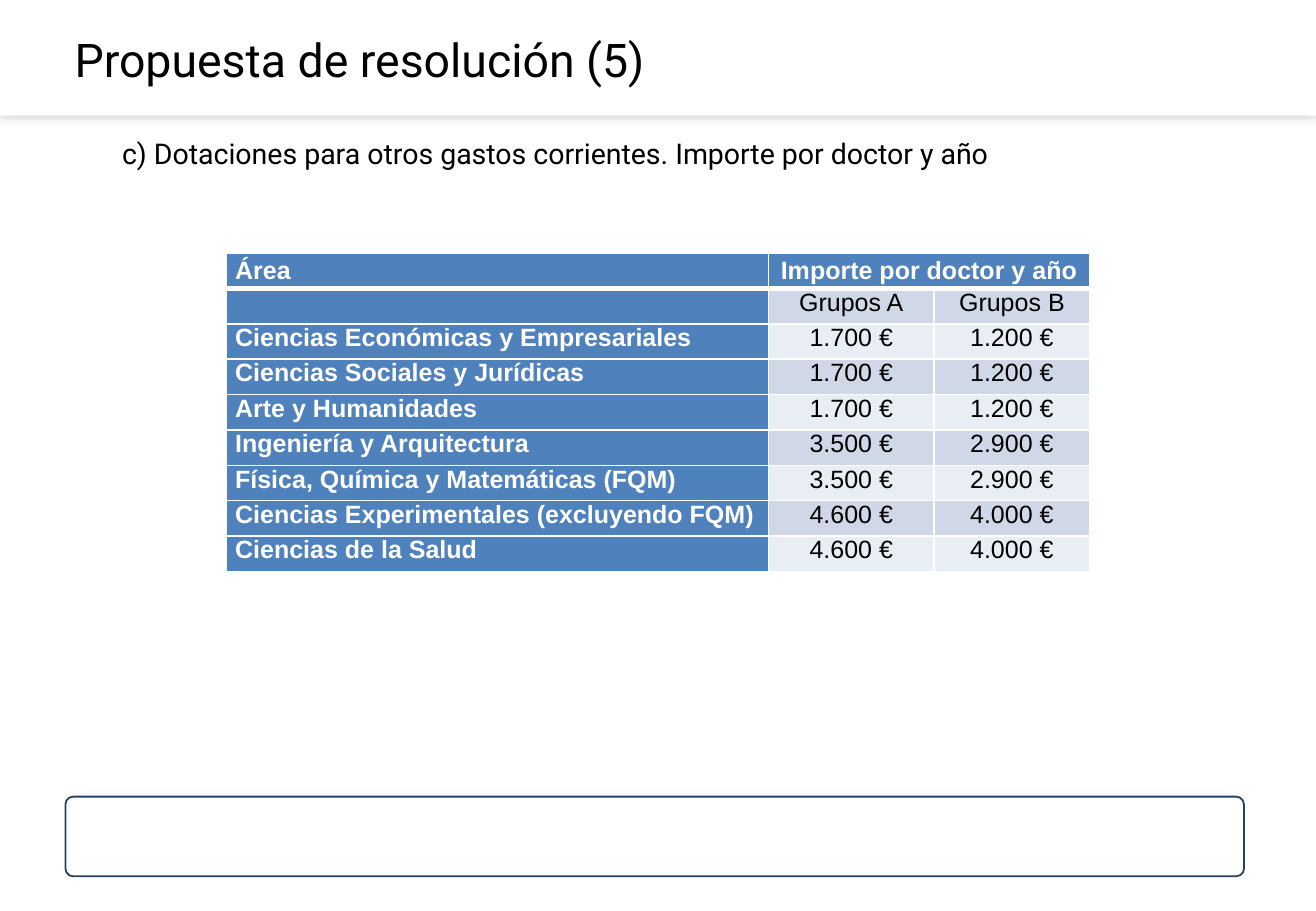
from dataclasses import dataclass

from lxml.etree import SubElement
from pptx import Presentation
from pptx.dml.color import RGBColor
from pptx.enum.shapes import MSO_SHAPE
from pptx.enum.text import MSO_ANCHOR, PP_ALIGN
from pptx.oxml import parse_xml
from pptx.oxml.ns import nsdecls, qn
from pptx.util import Inches, Pt


@dataclass(frozen=True)
class Theme:
    white: str = "FFFFFF"
    black: str = "000000"
    navy: str = "254061"
    blue: str = "4F81BD"
    bands: tuple = ("D0D8E8", "E9EDF4")
    heading_font: str = "Roboto"
    table_font: str = "Arial"
    title_size: int = 26
    body_size: int = 16
    table_size: int = 14


class SlideBuilder:
    """Adds styled elements to the current slide."""

    def __init__(self, prs, theme):
        self.theme = theme
        self.s = prs.slides.add_slide(prs.slide_layouts[5])

    def add_text(self, p, text, size, font, color, bold=False):
        r = p.add_run()
        r.text = text
        r.font.size = Pt(size)
        r.font.name = font
        r.font.bold = bold
        r.font.color.rgb = RGBColor.from_string(color)

    def frame(self, sp, anchor):
        tf = sp.text_frame
        tf.word_wrap = True
        tf.vertical_anchor = anchor
        tf.margin_left = tf.margin_right = Inches(0.07)
        tf.margin_top = tf.margin_bottom = Inches(0.03)
        return tf

    def panel(self, kind, box, line=None):
        sp = self.s.shapes.add_shape(kind, *map(Inches, box))
        sp.shadow.inherit = False
        sp.fill.solid()
        sp.fill.fore_color.rgb = RGBColor.from_string(self.theme.white)
        if line:
            sp.line.color.rgb = RGBColor.from_string(line)
            sp.line.width = Pt(1)
        else:
            sp.line.fill.background()
        return sp

    def header(self, box):
        sp = self.panel(MSO_SHAPE.RECTANGLE, box)
        effects = sp._element.spPr.find(qn("a:effectLst"))
        effects.append(parse_xml(
            f'<a:outerShdw {nsdecls("a")} blurRad="{Pt(6)}" dist="0" dir="13500000">'
            f'<a:srgbClr val="{self.theme.black}"><a:alpha val="20000"/></a:srgbClr>'
            '</a:outerShdw>'))

    def footer(self, box):
        sp = self.panel(MSO_SHAPE.ROUNDED_RECTANGLE, box, self.theme.navy)
        sp.adjustments[0] = 0.096

    def title(self, text, box):
        t = self.theme
        sp = self.s.shapes.title
        sp.left, sp.top, sp.width, sp.height = map(Inches, box)
        self.s.shapes._spTree.append(sp._element)
        p = self.frame(sp, MSO_ANCHOR.MIDDLE).paragraphs[0]
        p.alignment = PP_ALIGN.LEFT
        self.add_text(p, text, t.title_size, t.heading_font, t.black)

    def body(self, text, box):
        t = self.theme
        sp = self.s.shapes.add_textbox(*map(Inches, box))
        p = self.frame(sp, MSO_ANCHOR.TOP).paragraphs[0]
        p.level = 1
        pPr = p._p.get_or_add_pPr()
        pPr.set("marL", str(Inches(0.57)))
        pPr.set("indent", str(Inches(-0.22)))
        self.add_text(p, text, t.body_size, t.heading_font, t.black)

    def borders(self, cell, widths):
        tcPr = cell._tc.get_or_add_tcPr()
        for side, width in widths.items():
            ln = SubElement(tcPr, qn(f"a:ln{side}"), w=str(Pt(width)))
            fill = SubElement(ln, qn("a:solidFill"))
            SubElement(fill, qn("a:srgbClr"), val=self.theme.white)

    def cell(self, cell, text, row, col):
        t = self.theme
        heading = row == 0 or col == 0
        cell.margin_left = cell.margin_right = Inches(0.07)
        cell.margin_top = cell.margin_bottom = 0
        cell.vertical_anchor = MSO_ANCHOR.MIDDLE if row == 0 else MSO_ANCHOR.TOP
        self.borders(cell, {"L": 1, "R": 1, "T": 3 if row == 1 else 1,
                            "B": 3 if row == 0 else 1})
        cell.fill.solid()
        color = t.blue if heading else t.bands[(row - 1) % 2]
        cell.fill.fore_color.rgb = RGBColor.from_string(color)
        p = cell.text_frame.paragraphs[0]
        p.alignment = PP_ALIGN.CENTER if col else PP_ALIGN.JUSTIFY
        if text:
            self.add_text(p, text, t.table_size, t.table_font,
                          t.white if heading else t.black, heading)
        else:
            p._p.get_or_add_endParaRPr().set("sz", str(t.table_size * 100))

    def table(self, rows, box, widths):
        shape = self.s.shapes.add_table(len(rows), len(widths), *map(Inches, box))
        table = shape.table
        table.horz_banding = table.first_row = False
        for column, width in zip(table.columns, widths):
            column.width = Inches(width)
        for i, row in enumerate(rows):
            for j, text in enumerate(row):
                self.cell(table.cell(i, j), text, i, j)
        table.cell(0, 1).merge(table.cell(0, 2))


AMOUNTS = [
    ("Área", "Importe por doctor y año", ""),
    ("", "Grupos A", "Grupos B"),
    ("Ciencias Económicas y Empresariales", "1.700 €", "1.200 €"),
    ("Ciencias Sociales y Jurídicas", "1.700 €", "1.200 €"),
    ("Arte y Humanidades", "1.700 €", "1.200 €"),
    ("Ingeniería y Arquitectura", "3.500 €", "2.900 €"),
    ("Física, Química y Matemáticas (FQM)", "3.500 €", "2.900 €"),
    ("Ciencias Experimentales (excluyendo FQM)", "4.600 €", "4.000 €"),
    ("Ciencias de la Salud", "4.600 €", "4.000 €"),
]


def main():
    prs = Presentation()
    prs.slide_width, prs.slide_height = Inches(10.24), Inches(7.09)
    slide = SlideBuilder(prs, Theme())
    slide.header((0, 0, 10.24, 0.9))
    slide.footer((0.51, 6.2, 9.17, 0.62))
    slide.title("Propuesta de resolución (5)", (0.51, 0.09, 9.21, 0.73))
    slide.body("c) Dotaciones para otros gastos corrientes. Importe por doctor y año",
               (0.53, 1.03, 9.18, 5.02))
    slide.table(AMOUNTS, (1.76, 1.97, 6.72, 2.48), (4.22, 1.29, 1.21))
    prs.save("out.pptx")


if __name__ == "__main__":
    main()
